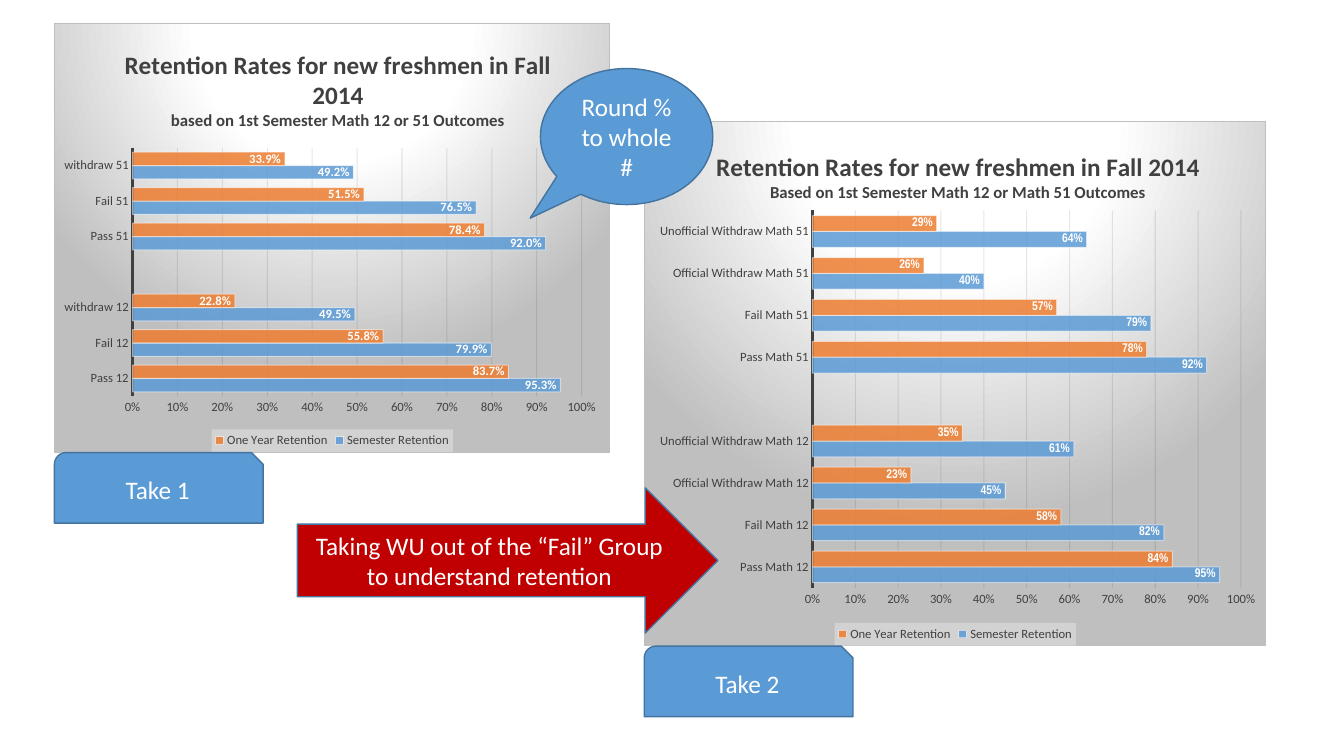
import pptx
import pptx.util
import pptx.chart.data
import pptx.dml.color
import pptx.enum.chart
import pptx.enum.shapes
import pptx.enum.text
import pptx.oxml
import pptx.oxml.ns

NAMESPACES = pptx.oxml.ns.nsdecls("a", "c")


def paint(fill, color, alpha=100):
    fill.solid()
    fill.fore_color.rgb = pptx.dml.color.RGBColor.from_string(color)
    if alpha < 100:
        tint = fill._xPr.xpath("./a:solidFill/a:srgbClr")[0]
        tint.append(pptx.oxml.parse_xml(f'<a:alpha {NAMESPACES} val="{alpha * 1000}"/>'))


def make_layout(target, **shares):
    modes = "".join(f'<c:{key}Mode val="edge"/>' for key in "xy")
    sizes = "".join(f'<c:{key} val="{share}"/>' for key, share in shares.items())
    return pptx.oxml.parse_xml(
        f"<c:layout {NAMESPACES}><c:manualLayout>{target}{modes}{sizes}</c:manualLayout></c:layout>")


AREA_STYLE = f"""<c:spPr {NAMESPACES}><a:gradFill><a:gsLst>
<a:gs pos="0"><a:srgbClr val="FFFFFF"/></a:gs>
<a:gs pos="39000"><a:srgbClr val="FFFFFF"/></a:gs>
<a:gs pos="100000"><a:srgbClr val="BFBFBF"/></a:gs></a:gsLst>
<a:path path="circle"><a:fillToRect l="50000" t="-80000" r="50000" b="180000"/></a:path></a:gradFill>
<a:ln w="9525"><a:solidFill><a:srgbClr val="BFBFBF"/></a:solidFill></a:ln></c:spPr>"""
LEGEND_STYLE = f"""<c:spPr {NAMESPACES}><a:solidFill><a:srgbClr val="F2F2F2">
<a:alpha val="39000"/></a:srgbClr></a:solidFill></c:spPr>"""

deck = pptx.Presentation()
deck.slide_width = pptx.util.Inches(13.33)
deck.slide_height = pptx.util.Inches(7.5)
page = deck.slides.add_slide(deck.slide_layouts[6])

takes = [
    {
        "frame": (0.54, 0.23, 5.51, 4.26),
        "title": ["Retention Rates for new freshmen in Fall 2014",
                  "based on 1st Semester Math 12 or 51 Outcomes"],
        "title_spot": {"x": 0.12, "y": 0.05},
        "plot": {"x": 0.14, "y": 0.29, "w": 0.81, "h": 0.58},
        "outcomes": ["Pass 12", "Fail 12", "withdraw 12", "", "Pass 51", "Fail 51", "withdraw 51"],
        "semester": [0.953, 0.799, 0.495, None, 0.92, 0.765, 0.492],
        "year": [0.837, 0.558, 0.228, None, 0.784, 0.515, 0.339],
        "format": "0.0%",
        "label_font": "Calibri",
    },
    {
        "frame": (6.39, 1.2, 6.17, 5.21),
        "title": ["Retention Rates for new freshmen in Fall 2014",
                  "Based on 1st Semester Math 12 or Math 51 Outcomes"],
        "title_spot": {"x": 0.11, "y": 0.05},
        "plot": {"x": 0.27, "y": 0.17, "w": 0.69, "h": 0.72},
        "outcomes": ["Pass Math 12", "Fail Math 12", "Official Withdraw Math 12",
                     "Unofficial Withdraw Math 12", "", "Pass Math 51", "Fail Math 51",
                     "Official Withdraw Math 51", "Unofficial Withdraw Math 51"],
        "semester": [0.95, 0.82, 0.45, 0.61, None, 0.92, 0.79, 0.4, 0.64],
        "year": [0.84, 0.58, 0.23, 0.35, None, 0.78, 0.57, 0.26, 0.29],
        "format": "0%",
        "label_font": "Arial Narrow",
    },
]

for take in takes:
    rates = pptx.chart.data.CategoryChartData(number_format=take["format"])
    rates.categories = take["outcomes"]
    rates.add_series("Semester Retention", take["semester"])
    rates.add_series("One Year Retention", take["year"])
    chart = page.shapes.add_chart(
        pptx.enum.chart.XL_CHART_TYPE.BAR_CLUSTERED,
        *[pptx.util.Inches(length) for length in take["frame"]], rates).chart
    chart.font.name = "Calibri"
    chart.font.size = pptx.util.Pt(10)
    paint(chart.font.fill, "000000")
    chart.element.xpath("./c:chart")[0].addnext(pptx.oxml.parse_xml(AREA_STYLE))

    heading = chart.chart_title.text_frame
    heading.text = "\n".join(take["title"])
    for para, size in zip(heading.paragraphs, (18, 12)):
        for span in para.runs:
            span.font.name = "Calibri"
            span.font.size = pptx.util.Pt(size)
            span.font.bold = True
            paint(span.font.fill, "404040")
    chart.chart_title.include_in_layout = False
    title = chart.element.xpath("./c:chart/c:title")[0]
    plot_area = chart.element.xpath("./c:chart/c:plotArea")[0]
    for parent in (title, plot_area):
        for layout in parent.xpath("./c:layout"):
            parent.remove(layout)
    title.xpath("./c:tx")[0].addnext(make_layout("", **take["title_spot"]))
    plot_area.insert(0, make_layout('<c:layoutTarget val="inner"/>', **take["plot"]))

    chart.has_legend = True
    chart.legend.position = pptx.enum.chart.XL_LEGEND_POSITION.BOTTOM
    chart.legend.include_in_layout = False
    outcome_axis, scale = chart.category_axis, chart.value_axis
    for font in (chart.legend.font, outcome_axis.tick_labels.font, scale.tick_labels.font):
        font.name = "Calibri"
        font.size = pptx.util.Pt(9)
        paint(font.fill, "404040")
    chart.element.xpath(".//c:legend/c:txPr")[0].addprevious(pptx.oxml.parse_xml(LEGEND_STYLE))

    for axis in (outcome_axis, scale):
        axis.major_tick_mark = pptx.enum.chart.XL_TICK_MARK.NONE
        axis.minor_tick_mark = pptx.enum.chart.XL_TICK_MARK.NONE
    outcome_axis.format.line.width = pptx.util.Pt(1.5)
    paint(outcome_axis.format.line.fill, "404040")
    scale.minimum_scale, scale.maximum_scale, scale.major_unit = 0, 1, 0.1
    scale.format.line.fill.background()
    scale.tick_labels.number_format = "0%"
    scale.tick_labels.number_format_is_linked = False
    scale.major_gridlines.format.line.width = pptx.util.Pt(0.75)
    paint(scale.major_gridlines.format.line.fill, "0D0D0D", 10)

    bars = chart.plots[0]
    bars.gap_width = 65
    bars.vary_by_categories = False
    for series, color in zip(bars.series, ("5B9BD5", "ED7D31")):
        paint(series.format.fill, color, 85)
        series.format.line.width = pptx.util.Pt(0.75)
        paint(series.format.line.fill, "FFFFFF", 50)
        labels = series.data_labels
        labels.show_value = True
        labels.position = pptx.enum.chart.XL_LABEL_POSITION.INSIDE_END
        labels.number_format = take["format"]
        labels.number_format_is_linked = False
        labels.font.name = take["label_font"]
        labels.font.size = pptx.util.Pt(9)
        labels.font.bold = True
        paint(labels.font.fill, "FFFFFF")

kinds = pptx.enum.shapes.MSO_SHAPE
notes = [
    (kinds.OVAL_CALLOUT, (5.36, 0.68, 1.71, 1.35), "5B9BD5", "Round % to whole #"),
    (kinds.SNIP_ROUND_RECTANGLE, (0.54, 4.49, 2.07, 0.7), "5B9BD5", "Take 1"),
    (kinds.SNIP_ROUND_RECTANGLE, (6.39, 6.41, 2.07, 0.7), "5B9BD5", "Take 2"),
    (kinds.RIGHT_ARROW, (2.95, 4.84, 4.17, 1.44), "C00000",
     "Taking WU out of the “Fail” Group to understand retention"),
]
for kind, frame, color, words in notes:
    box = page.shapes.add_shape(kind, *[pptx.util.Inches(length) for length in frame])
    box.shadow.inherit = False
    paint(box.fill, color)
    box.line.width = pptx.util.Pt(1)
    paint(box.line.fill, "43739E")
    if kind == kinds.OVAL_CALLOUT:
        box.adjustments[0], box.adjustments[1] = -0.56, 0.6
    box.text_frame.word_wrap = True
    box.text_frame.vertical_anchor = pptx.enum.text.MSO_ANCHOR.MIDDLE
    para = box.text_frame.paragraphs[0]
    para.text = words
    para.alignment = pptx.enum.text.PP_ALIGN.CENTER
    para.font.name = "Calibri"
    para.font.size = pptx.util.Pt(18)
    paint(para.font.fill, "FFFFFF")

deck.save("out.pptx")
